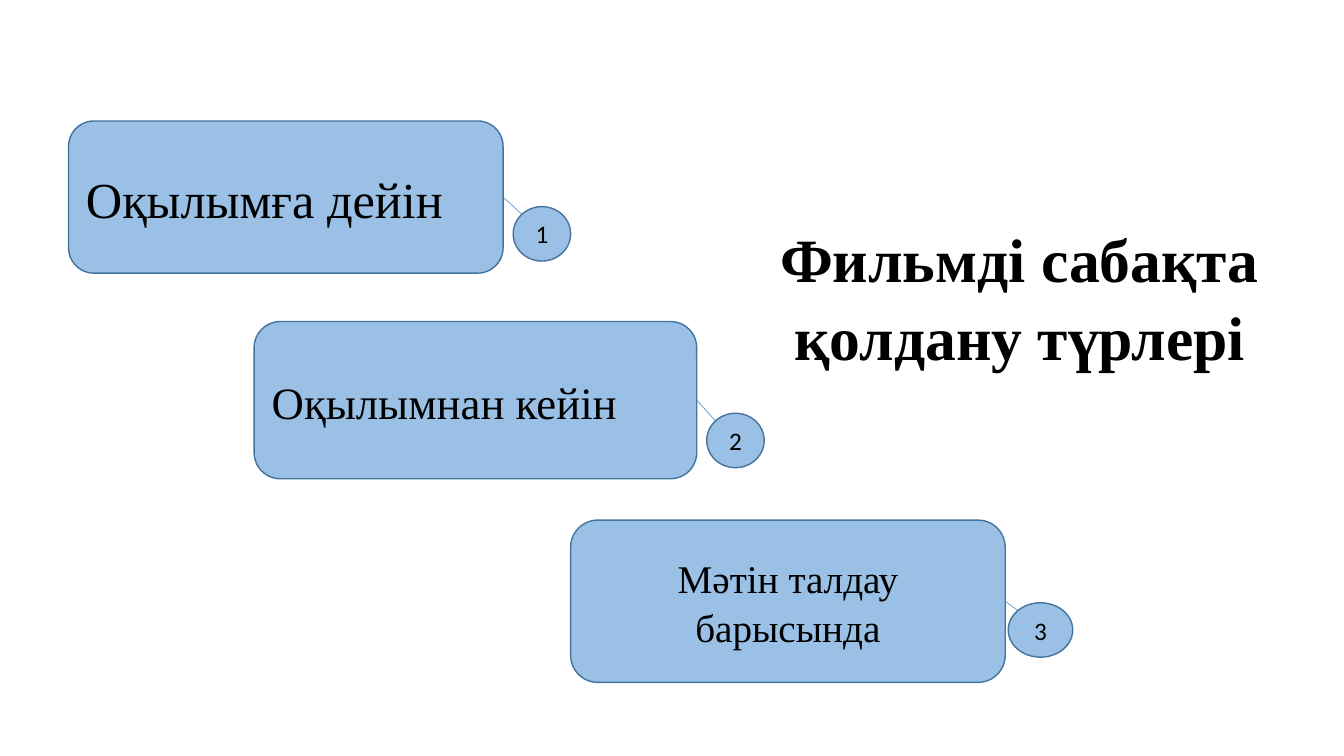
from lxml import etree
from pptx import Presentation
from pptx.dml.color import RGBColor
from pptx.enum.shapes import MSO_CONNECTOR, MSO_SHAPE
from pptx.enum.text import MSO_ANCHOR, MSO_AUTO_SIZE, PP_ALIGN
from pptx.oxml.ns import qn
from pptx.util import Inches, Pt

ROUNDED, OVAL = MSO_SHAPE.ROUNDED_RECTANGLE, MSO_SHAPE.OVAL
STRAIGHT = MSO_CONNECTOR.STRAIGHT
LEFT, CENTER = PP_ALIGN.LEFT, PP_ALIGN.CENTER
TOP, MIDDLE = MSO_ANCHOR.TOP, MSO_ANCHOR.MIDDLE
RIGHT_SIDE = 3


def color(hex_code):
    return RGBColor.from_string(hex_code)


def write(frame, text, size, font="Times New Roman", bold=False,
          align=CENTER, anchor=MIDDLE, spacing=1.05):
    frame.word_wrap = True
    frame.auto_size = MSO_AUTO_SIZE.NONE
    frame.vertical_anchor = anchor
    paragraph = frame.paragraphs[0]
    paragraph.alignment = align
    paragraph.line_spacing = spacing
    run = paragraph.add_run()
    run.text = text
    run.font.size = Pt(size)
    run.font.name = font
    run.font.bold = bold
    run.font.color.rgb = color("000000")


class StepSlide:
    accent, outline = "5B9BD5", "43739E"
    opacity = 61

    def __init__(self, deck):
        self.slide = deck.slides.add_slide(deck.slide_layouts[5])
        self.shapes = self.slide.shapes

    def title(self, text, left, top, width, height):
        heading = self.shapes.title
        heading.left, heading.top = Inches(left), Inches(top)
        heading.width, heading.height = Inches(width), Inches(height)
        write(heading.text_frame, text, 44, bold=True, anchor=TOP)

    def block(self, kind, bounds, text, size, **style):
        block = self.shapes.add_shape(kind, *map(Inches, bounds))
        block.shadow.inherit = False
        block.fill.solid()
        block.fill.fore_color.rgb = color(self.accent)
        tint = block.fill._xPr.find(qn("a:solidFill"))[0]
        etree.SubElement(tint, qn("a:alpha"), val=str(self.opacity * 1000))
        block.line.color.rgb = color(self.outline)
        block.line.width = Pt(1)
        write(block.text_frame, text, size, **style)
        return block

    def link(self, stage, end):
        link = self.shapes.add_connector(STRAIGHT, 0, 0, *map(Inches, end))
        link.begin_connect(stage, RIGHT_SIDE)
        link.line.color.rgb = color(self.accent)
        link.line.width = Pt(0.5)
        etree.SubElement(link._element.spPr, qn("a:effectLst"))


STAGES = [
    ("Оқылымға дейін", 36, LEFT, (0.68, 1.2, 4.31, 1.51),
     (5.18, 2.13), (5.09, 2.05, 0.57, 0.54)),
    ("Оқылымнан кейін", 32, LEFT, (2.52, 3.19, 4.39, 1.56),
     (7.1, 4.18), (7.01, 4.1, 0.57, 0.54)),
    ("Мәтін талдау барысында", 28, CENTER, (5.66, 5.16, 4.31, 1.61),
     (10.1, 6.06), (10, 5.98, 0.64, 0.54)),
]


def main():
    deck = Presentation()
    deck.slide_width, deck.slide_height = Inches(13.33), Inches(7.5)
    page = StepSlide(deck)
    page.title("Фильмді сабақта қолдану түрлері", 7.53, 2.11, 5.17, 1.58)
    for number, (name, size, align, bounds, link_end, badge) in enumerate(STAGES, 1):
        stage = page.block(ROUNDED, bounds, name, size, align=align)
        page.link(stage, link_end)
        page.block(OVAL, badge, str(number), 18, font="Calibri", spacing=1)
    deck.save("out.pptx")


if __name__ == "__main__":
    main()
